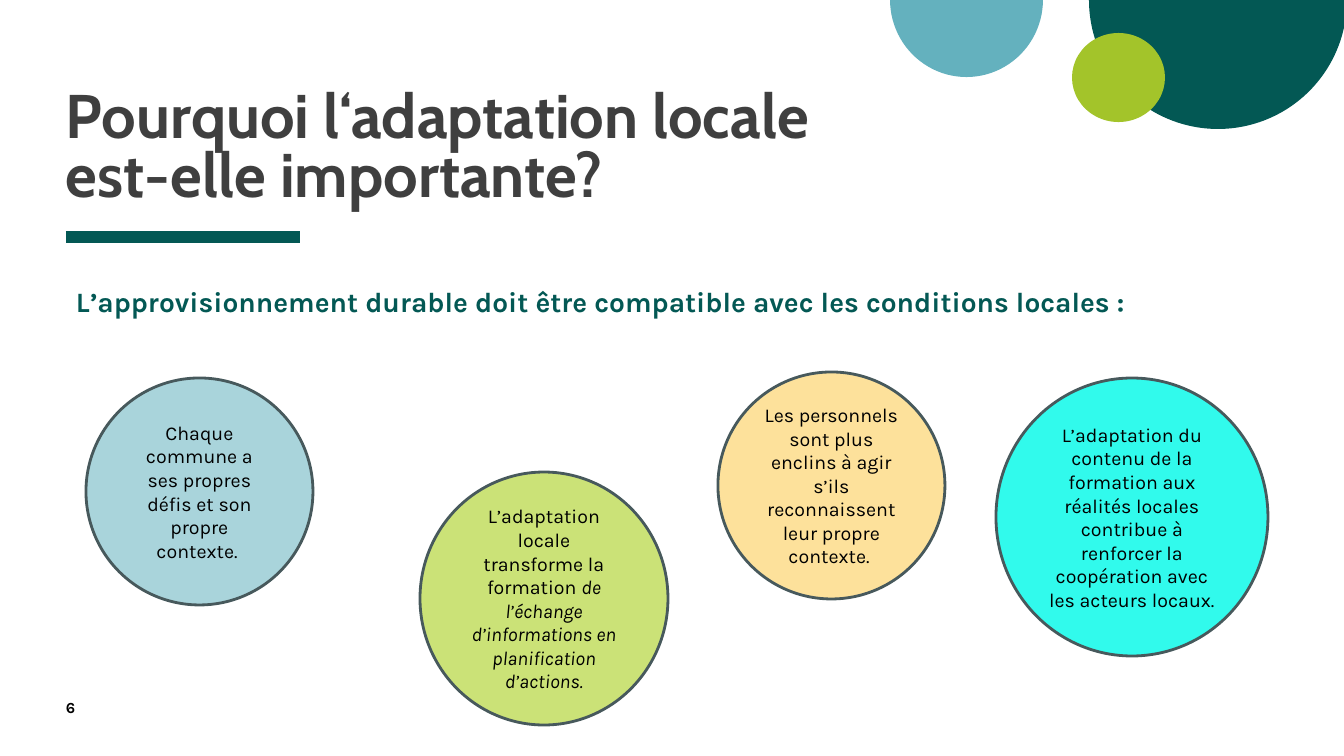
from lxml import etree
from pptx import Presentation
from pptx import util as u
from pptx.dml.color import RGBColor
from pptx.enum import shapes, text
from pptx.oxml import ns

COLORS = {
    "green": "035854", "blue": "64B1BE", "lime": "A3C42A",
    "title": "3F3F3F", "text": "000000", "outline": "47595C",
    "pale blue": "A9D4DB", "pale yellow": "FDE19B",
    "pale lime": "CBE277", "cyan": "31FAEC",
}
TITLE = "Pourquoi l‘adaptation locale est-elle importante?"
HEADING = "L’approvisionnement durable doit être compatible avec les conditions locales\u00a0:"
PAGE = "6"
HALF_DISCS = [
    ((1089, -129, 258, 258), "green"),
    ((890, -78, 153, 155), "blue"),
]
SMALL_DISC = (1072, 33, 93, 89)
REASONS = [
    ((86, 378, 227, 227), "pale blue",
     [("Chaque commune a ses propres défis et son propre contexte. ", False)]),
    ((718, 372, 227, 227), "pale yellow",
     [("Les personnels sont plus enclins à agir s’ils reconnaissent leur propre contexte. ", False)]),
    ((420, 472, 248, 253), "pale lime",
     [("L’adaptation locale transforme la formation ", False),
      ("de l’échange d’informations en planification d’actions.", True)]),
    ((996, 378, 272, 278), "cyan",
     [("L’adaptation du contenu de la formation aux réalités locales contribue à "
       "renforcer la coopération avec les acteurs locaux.", False)]),
]
SLIDE = (1344, 756)
SCALE = 12192000 / SLIDE[0]


def px(*lengths):
    return [u.Emu(round(length * SCALE)) for length in lengths]


def rgb(name):
    return RGBColor.from_string(COLORS[name])


def add_run(paragraph, words, size, color, font="Karla", bold=False, italic=False):
    run = paragraph.add_run()
    run.text = words
    run.font.name = font
    run.font.size = u.Pt(size)
    run.font.bold = bold
    run.font.italic = italic
    run.font.color.rgb = rgb(color)


def set_frame(frame, anchor, margins):
    frame.word_wrap = True
    frame.auto_size = text.MSO_AUTO_SIZE.NONE
    frame.vertical_anchor = anchor
    side, end = px(*margins)
    frame.margin_left = frame.margin_right = side
    frame.margin_top = frame.margin_bottom = end


def add_disc(kind, box, color):
    shape = slide.shapes.add_shape(kind, *px(*box))
    shape.shadow.inherit = False
    shape.fill.solid()
    shape.fill.fore_color.rgb = rgb(color)
    shape.line.fill.background()
    return shape


def add_label(box, words, size, color, margins):
    shape = slide.shapes.add_textbox(*px(*box))
    set_frame(shape.text_frame, text.MSO_ANCHOR.TOP, margins)
    add_run(shape.text_frame.paragraphs[0], words, size, color, bold=True)


presentation = Presentation()
presentation.slide_width, presentation.slide_height = px(*SLIDE)
slide = presentation.slides.add_slide(presentation.slide_layouts[5])

for box, color in HALF_DISCS:
    half = add_disc(shapes.MSO_SHAPE.PIE, box, color)
    half.adjustments[0] = 0
    half.adjustments[1] = 108
add_disc(shapes.MSO_SHAPE.OVAL, SMALL_DISC, "lime")

rule = slide.shapes.add_connector(shapes.MSO_CONNECTOR.STRAIGHT, *px(66, 237, 300, 237))
rule.line.color.rgb = rgb("green")
rule.line.width = u.Pt(8)
etree.SubElement(rule._element.spPr, ns.qn("a:effectLst"))

title = slide.shapes.title
title.left, title.top, title.width, title.height = px(66, 34, 748, 175)
set_frame(title.text_frame, text.MSO_ANCHOR.BOTTOM, (0, 0))
paragraph = title.text_frame.paragraphs[0]
paragraph.alignment = text.PP_ALIGN.LEFT
paragraph.line_spacing = 0.8
add_run(paragraph, TITLE, 44, "title", font="Cabin", bold=True)

add_label((66, 698, 57, 27), PAGE, 11, "text", (0, 0))
add_label((66, 279, 1213, 44), HEADING, 20, "green", (10, 5))

for box, color, runs in REASONS:
    disc = add_disc(shapes.MSO_SHAPE.FLOWCHART_CONNECTOR, box, color)
    disc.line.color.rgb = rgb("outline")
    disc.line.width = u.Pt(2)
    set_frame(disc.text_frame, text.MSO_ANCHOR.MIDDLE, (10, 5))
    paragraph = disc.text_frame.paragraphs[0]
    paragraph.alignment = text.PP_ALIGN.CENTER
    for words, italic in runs:
        add_run(paragraph, words, 14, "text", italic=italic)

presentation.save("out.pptx")
